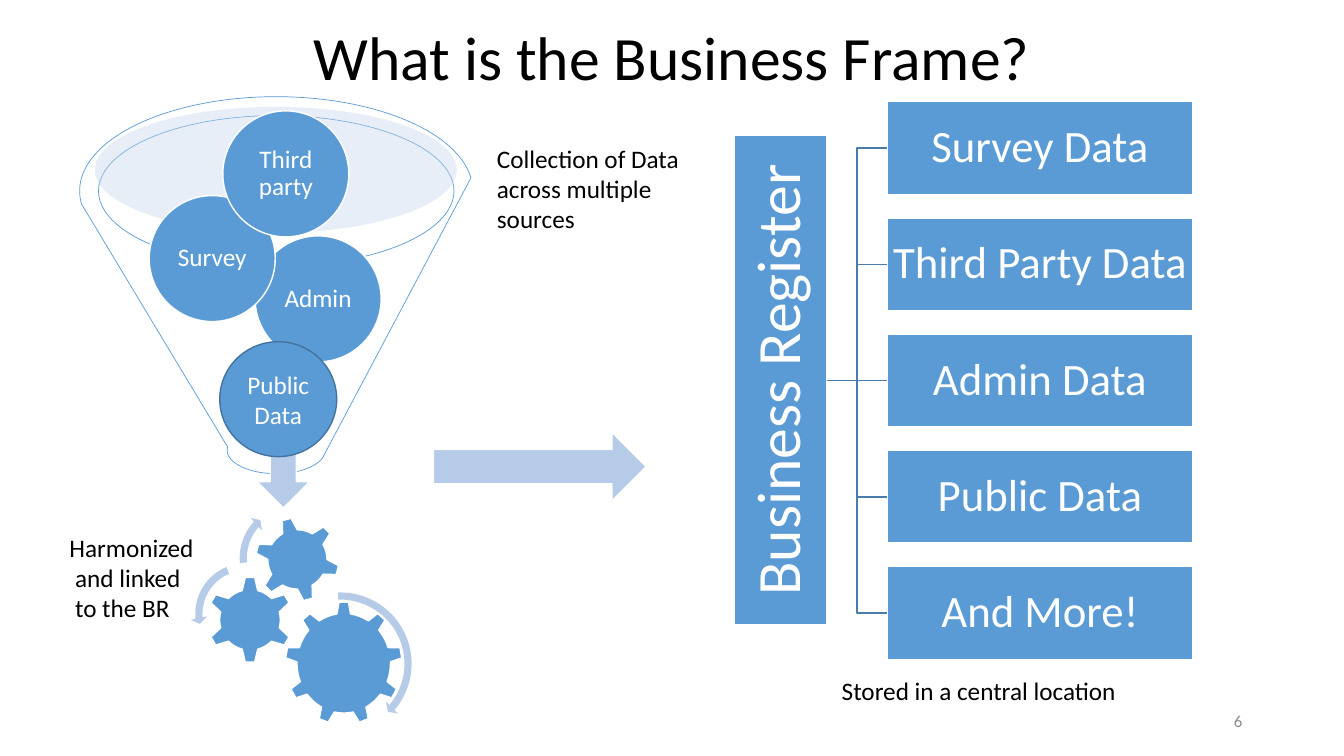
from lxml.etree import SubElement
from pptx import Presentation
from pptx.dml.color import RGBColor
from pptx.enum.shapes import MSO_CONNECTOR as Connector, MSO_SHAPE as Shape
from pptx.enum.text import MSO_ANCHOR as Anchor, PP_ALIGN as Align
from pptx.oxml.ns import qn
from pptx.util import Inches, Pt

THEME = {
    "font": "Calibri",
    "blue": RGBColor.from_string("5B9BD5"),
    "pale": RGBColor.from_string("B5CBE7"),
    "rim": RGBColor.from_string("C4D5EB"),
    "edge": RGBColor.from_string("43739E"),
    "branch": RGBColor.from_string("497CAB"),
    "white": RGBColor.from_string("FFFFFF"),
    "black": RGBColor.from_string("000000"),
    "grey": RGBColor.from_string("8C8C8C"),
    "title": 44,
    "register": 44,
    "entry": 32,
    "body": 18,
    "number": 12,
}

presentation = Presentation()
presentation.slide_width = Inches(13.33)
presentation.slide_height = Inches(7.5)
slide = presentation.slides.add_slide(presentation.slide_layouts[6])


def add_figure(kind, box, fill, line=None, weight=1, opacity=None, rotation=0):
    shape = slide.shapes.add_shape(kind, *map(Inches, box))
    shape.shadow.inherit = False
    shape.rotation = rotation
    shape.fill.solid()
    shape.fill.fore_color.rgb = THEME[fill]
    if opacity:
        color = shape._element.spPr.find(qn("a:solidFill"))[0]
        SubElement(color, qn("a:alpha"), val=str(opacity * 1000))
    if line:
        shape.line.color.rgb = THEME[line]
        shape.line.width = Pt(weight)
    else:
        shape.line.fill.background()
    return shape


def write(shape, lines, size, color="white", align=Align.CENTER,
          anchor=Anchor.MIDDLE, spacing=1.0, inset=None):
    frame = shape.text_frame
    frame_format = {"word_wrap": True, "vertical_anchor": anchor}
    if inset is not None:
        for side in ("left", "right", "top", "bottom"):
            frame_format[f"margin_{side}"] = Inches(inset)
    for name, value in frame_format.items():
        setattr(frame, name, value)
    for index, line in enumerate(lines):
        paragraph = frame.paragraphs[0] if index == 0 else frame.add_paragraph()
        paragraph.alignment = align
        paragraph.line_spacing = spacing
        run = paragraph.add_run()
        run.text = line
        for name, value in {"name": THEME["font"], "size": Pt(THEME[size])}.items():
            setattr(run.font, name, value)
        run.font.color.rgb = THEME[color]


add_figure(Shape.FUNNEL, (0.79, 0.96, 3.9, 3.74), "white", "blue", 0.5, opacity=40)
add_figure(Shape.OVAL, (0.94, 1.06, 3.59, 1.25), "rim", opacity=40)
add_figure(Shape.DOWN_ARROW, (2.55, 4.17, 0.52, 0.87), "pale", "white")

SOURCES = [("Admin", 2.53, 2.34), ("Survey", 1.48, 1.94), ("Third party", 2.21, 1.1)]
for name, left, top in SOURCES:
    circle = add_figure(Shape.OVAL, (left, top, 1.25, 1.25), "blue", "white")
    write(circle, [name], "body", spacing=0.9, inset=0)

GEARS = [
    (Shape.GEAR_9, (2.83, 5.97, 1.16, 1.22), 0),
    (Shape.GEAR_6, (2.05, 5.72, 0.86, 0.86), 0),
    (Shape.GEAR_6, (2.53, 5.13, 0.84, 0.84), 345),
]
for kind, box, rotation in GEARS:
    add_figure(kind, box, "blue", "white", rotation=rotation)

TURNS = [
    (Shape.CIRCULAR_ARROW, (2.62, 5.83, 1.51, 1.51),
     (0.047, 2.99, 24.182, 160.912, 0.055)),
    (Shape.LEFT_CIRCULAR_ARROW, (1.89, 5.54, 1.1, 1.1),
     (0.065, 4.3, 104.891, 148.378, 0.075)),
    (Shape.CIRCULAR_ARROW, (2.33, 4.95, 1.18, 1.18),
     (0.06, 3.941, 133.138, 105.082, 0.07)),
]
for kind, box, adjustments in TURNS:
    turn = add_figure(kind, box, "pale")
    for index, value in enumerate(adjustments):
        turn.adjustments[index] = value

add_figure(Shape.RIGHT_ARROW, (4.3, 4.29, 2.11, 0.68), "pale", "white")
public_circle = add_figure(Shape.OVAL, (2.18, 3.39, 1.16, 1.14), "blue", "edge")
write(public_circle, ["Public Data"], "body", inset=0)

ENTRIES = ["Survey Data", "Third Party Data", "Admin Data", "Public Data", "And More!"]
ENTRY_LEFT, ENTRY_TOP, ENTRY_HEIGHT, ENTRY_STEP = 8.8, 1.01, 0.92, 1.153
MIDDLE = len(ENTRIES) // 2
entry_tops = [ENTRY_TOP + index * ENTRY_STEP for index in range(len(ENTRIES))]
centers = [top + ENTRY_HEIGHT / 2 for top in entry_tops]

for index, center in enumerate(centers):
    kind = Connector.STRAIGHT if index == MIDDLE else Connector.ELBOW
    ends = (8.2, centers[MIDDLE], ENTRY_LEFT, center)
    branch = slide.shapes.add_connector(kind, *map(Inches, ends))
    branch.line.color.rgb = THEME["branch"]
    branch.line.width = Pt(1)
    SubElement(branch._element.spPr, qn("a:effectLst"))

register = add_figure(Shape.RECTANGLE, (5.31, 3.31, 4.86, 0.92), "blue", "white",
                      rotation=270)
write(register, ["Business Register"], "register", spacing=0.9, inset=0.03)

for name, top in zip(ENTRIES, entry_tops):
    entry = add_figure(Shape.RECTANGLE, (ENTRY_LEFT, top, 3.03, ENTRY_HEIGHT),
                       "blue", "white")
    write(entry, [name], "entry", spacing=0.9, inset=0.02)

CAPTIONS = [
    ((4.83, 1.37, 2.06, 1.01), ["Collection of Data across multiple sources"]),
    ((0.59, 5.23, 2.06, 1.31), ["Harmonized", " and linked", " to the BR"]),
    ((8.25, 6.65, 3.15, 0.4), ["Stored in a central location"]),
]
for box, lines in CAPTIONS:
    caption = slide.shapes.add_textbox(*map(Inches, box))
    write(caption, lines, "body", "black", Align.LEFT, Anchor.TOP)

title = slide.shapes.add_textbox(*map(Inches, (0, -0.02, 13.33, 1.25)))
write(title, ["What is the Business Frame?"], "title", "black", spacing=0.9)

slide_number = slide.shapes.add_textbox(*map(Inches, (9.42, 6.95, 3, 0.4)))
write(slide_number, ["6"], "number", "grey", Align.RIGHT)

presentation.save("out.pptx")
